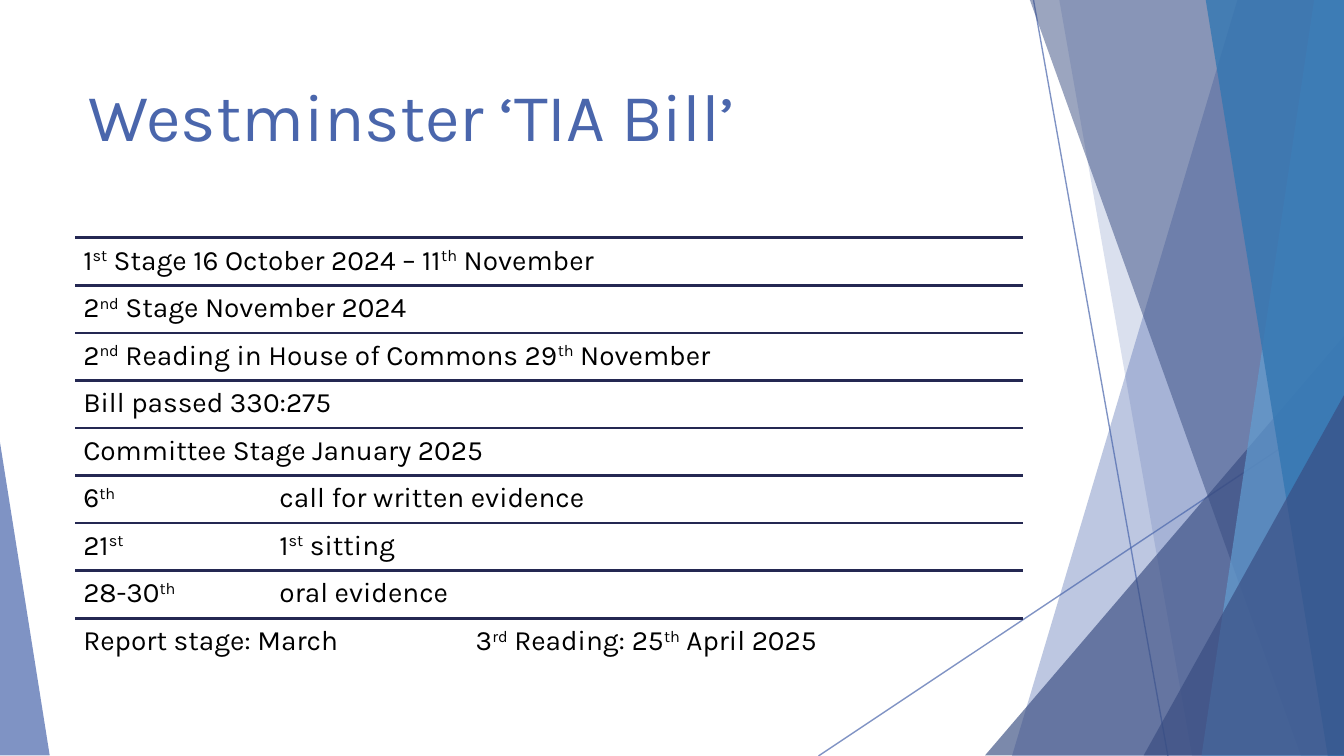
"""Build the Westminster 'TIA Bill' timeline slide."""
from lxml import etree
from pptx import Presentation, util as u
from pptx.dml.color import RGBColor
from pptx.enum import shapes, text
from pptx.oxml.ns import qn

COLORS = {"blue": "4A66AC", "navy": "384C81", "sky": "629DD1", "azure": "3477B2",
          "rule": "242852", "black": "000000"}
FONT = "Karla"
WIDTH = 10
HEIGHT = WIDTH * 9 / 16
LEFT, TABLE_WIDTH, FIRST_ROW, LAST_ROW = 0.56, 7.05, 1.77, 4.6
TAB, TAB_COUNT = 0.73, 4

TITLE = "Westminster ‘TIA Bill’"
STAGES = [
    "1^st^ Stage 16 October 2024 – 11^th^ November",
    "2^nd^ Stage November 2024",
    "2^nd^ Reading in House of Commons 29^th^ November",
    "Bill passed 330:275",
    "Committee Stage January 2025",
    "6^th^ \t\tcall for written evidence",
    "21^st^ \t\t1^st^ sitting",
    "28-30^th^ \toral evidence",
    "Report stage: March\t\t3^rd^ Reading: 25^th^ April 2025",
]
THIN_LINES = [(7.69, 0, 8.69, HEIGHT), (10, 3.02, 6.09, HEIGHT)]
FACETS = [
    ("band", 9.21, 7.53, "blue", 36),
    ("band", 7.88, 8.87, "blue", 20),
    ("triangle", (7.33, 2.5, 2.67, 3.12), 1, "navy", 66),
    ("band", 7.66, 9.68, "navy", 50),
    ("band", 9.78, 8.94, "sky", 70),
    ("band", 8.97, 9.88, "azure", 80),
    ("triangle", (8.51, 2.94, 1.49, 2.68), 1, "navy", 66),
    ("triangle", (0, 3.29, 0.37, 2.33), 0, "blue", 70),
]


def paint(fmt, color, alpha=100):
    fmt.solid()
    fmt.fore_color.rgb = RGBColor.from_string(COLORS[color])
    if alpha < 100:
        rgb = fmt._xPr.find(qn("a:solidFill"))[0]
        etree.SubElement(rgb, qn("a:alpha")).set("val", str(alpha * 1000))


def add_line(s, ends, color, width, alpha=100):
    line = s.shapes.add_connector(shapes.MSO_CONNECTOR.STRAIGHT, *map(u.Inches, ends))
    line.line.width = u.Pt(width)
    paint(line.line.fill, color, alpha)
    etree.SubElement(line._element.spPr, qn("a:effectLst"))


def add_facet(s, kind, place, end, color, alpha):
    if kind == "band":
        corners = [(place, -0.01), (WIDTH, -0.01), (WIDTH, HEIGHT), (end, HEIGHT)]
        points = [tuple(map(u.Inches, c)) for c in corners]
        builder = s.shapes.build_freeform(*points[0])
        builder.add_line_segments(points[1:], close=True)
        sp = builder.convert_to_shape()
    else:
        sp = s.shapes.add_shape(shapes.MSO_SHAPE.ISOSCELES_TRIANGLE, *map(u.Inches, place))
        sp.adjustments[0] = end
    sp.shadow.inherit = False
    sp.line.fill.background()
    paint(sp.fill, color, alpha)


def add_text(s, content, box, size, color="black", insets=(0.06, 0.06), spacing=1.0, tabs=0):
    tf = s.shapes.add_textbox(*map(u.Inches, box)).text_frame
    tf.word_wrap = True
    tf.vertical_anchor = text.MSO_ANCHOR.TOP
    tf.margin_left = tf.margin_right = u.Inches(insets[0])
    tf.margin_top = tf.margin_bottom = u.Inches(insets[1])
    p = tf.paragraphs[0]
    p.line_spacing = spacing
    if tabs:
        stops = etree.SubElement(p._p.get_or_add_pPr(), qn("a:tabLst"))
        for i in range(1, tabs + 1):
            etree.SubElement(stops, qn("a:tab"), pos=str(u.Inches(TAB * i)), algn="l")
    for i, part in enumerate(content.split("^")):
        r = p.add_run()
        r.text = part
        r.font.name, r.font.size = FONT, u.Pt(size)
        r.font.color.rgb = RGBColor.from_string(COLORS[color])
        if i % 2:
            r.font._element.set("baseline", "30000")


def main():
    prs = Presentation()
    prs.slide_width, prs.slide_height = u.Inches(WIDTH), u.Inches(HEIGHT)
    s = prs.slides.add_slide(prs.slide_layouts[6])
    for ends in THIN_LINES:
        add_line(s, ends, "blue", 0.75, 70)
    for facet in FACETS:
        add_facet(s, *facet)
    add_text(s, TITLE, (LEFT, 0.5, TABLE_WIDTH, 1.08), 36, "blue", insets=(0.1, 0.05))
    row_height = (LAST_ROW - FIRST_ROW) / (len(STAGES) - 1)
    for i, stage in enumerate(STAGES):
        top = FIRST_ROW + i * row_height
        add_line(s, (LEFT, top, LEFT + TABLE_WIDTH, top), "rule", 1.5)
        add_text(s, stage, (LEFT, top, TABLE_WIDTH, row_height), 15, spacing=0.9,
                 tabs=TAB_COUNT if "\t" in stage else 0)
    prs.save("out.pptx")


if __name__ == "__main__":
    main()
